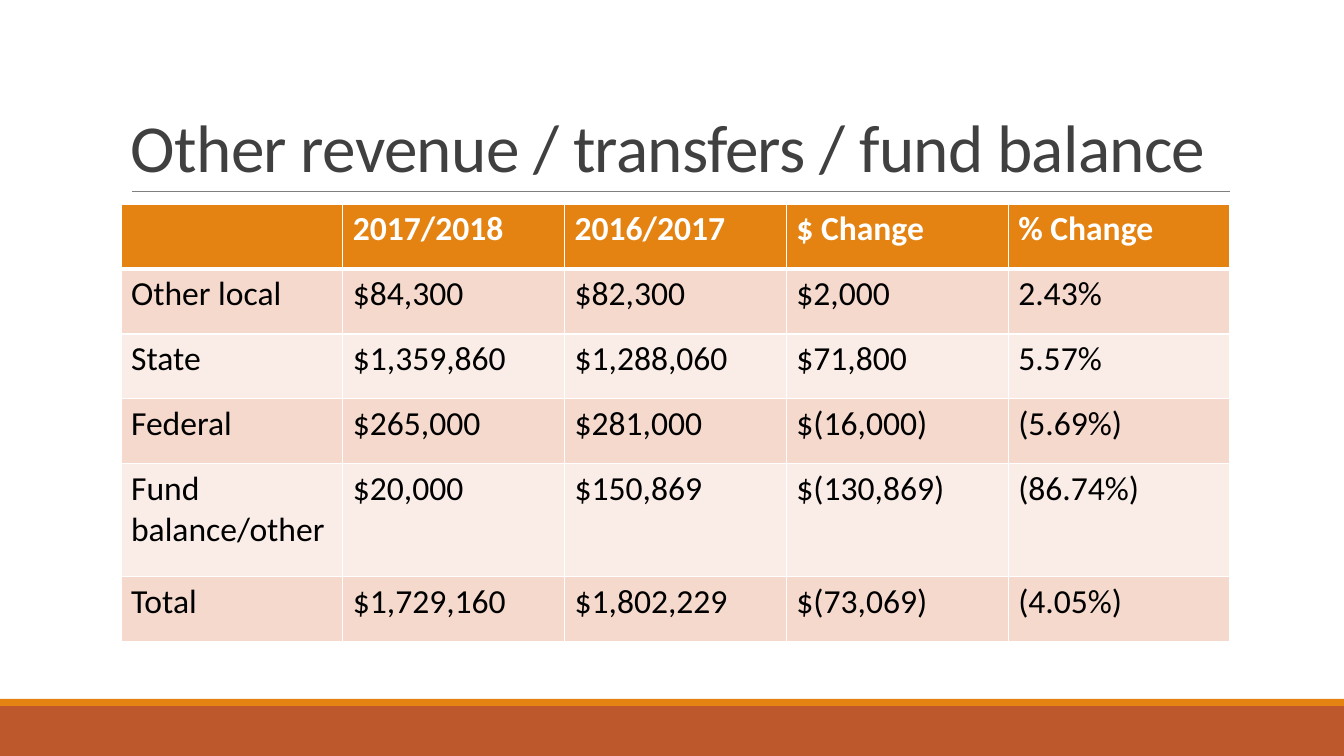
from lxml.etree import SubElement
from pptx import Presentation
from pptx.dml.color import RGBColor
from pptx.enum.shapes import MSO_CONNECTOR, MSO_SHAPE
from pptx.enum.text import MSO_ANCHOR
from pptx.oxml.ns import qn
from pptx.util import Emu, Pt

TITLE = "Other revenue / transfers / fund balance"
ROWS = [
    ("", "2017/2018", "2016/2017", "$ Change", "% Change"),
    ("Other local", "$84,300", "$82,300", "$2,000", "2.43%"),
    ("State", "$1,359,860", "$1,288,060", "$71,800", "5.57%"),
    ("Federal", "$265,000", "$281,000", "$(16,000)", "(5.69%)"),
    ("Fund balance/other", "$20,000", "$150,869", "$(130,869)", "(86.74%)"),
    ("Total", "$1,729,160", "$1,802,229", "$(73,069)", "(4.05%)"),
]
ROW_HEIGHTS = (65, 65, 65, 65, 113, 65)

FONT = "Calibri"
WHITE = RGBColor(0xFF, 0xFF, 0xFF)
BLACK = RGBColor(0x00, 0x00, 0x00)
TITLE_GREY = RGBColor(0x40, 0x40, 0x40)
RULE_GREY = RGBColor(0x80, 0x80, 0x80)
ORANGE = RGBColor(0xE4, 0x83, 0x12)
RUST = RGBColor(0xBD, 0x58, 0x2C)
BAND_DARK = RGBColor(0xF5, 0xD9, 0xCC)
BAND_LIGHT = RGBColor(0xFA, 0xED, 0xE7)

PAGE_WIDTH, PAGE_HEIGHT = 1344, 756
LEFT, CONTENT_WIDTH = 121, 1109


def px(length):
    return Emu(round(length * 12192000 / PAGE_WIDTH))


def add_bar(page, top, height, color):
    bar = page.shapes.add_shape(
        MSO_SHAPE.RECTANGLE, 0, px(top), px(PAGE_WIDTH), px(height))
    bar.shadow.inherit = False
    bar.fill.solid()
    bar.fill.fore_color.rgb = color
    bar.line.fill.background()


def add_rule(page):
    rule = page.shapes.add_connector(
        MSO_CONNECTOR.STRAIGHT, px(132), px(191), px(1230), px(191))
    rule.line.color.rgb = RULE_GREY
    rule.line.width = Pt(0.5)
    SubElement(rule._element.spPr, qn("a:effectLst"))


def add_title(page):
    box = page.shapes.add_textbox(px(LEFT), px(31), px(CONTENT_WIDTH), px(160))
    frame = box.text_frame
    frame.word_wrap = True
    frame.vertical_anchor = MSO_ANCHOR.BOTTOM
    para = frame.paragraphs[0]
    para.line_spacing = 0.85
    span = para.add_run()
    span.text = TITLE
    span.font.name = FONT
    span.font.size = Pt(48)
    span.font.color.rgb = TITLE_GREY
    span.font._element.set("spc", "-50")


def set_borders(cell, top, bottom):
    """Draw white borders; must run before the cell fill is set."""
    properties = cell._tc.get_or_add_tcPr()
    for side, width in (("L", 1), ("R", 1), ("T", top), ("B", bottom)):
        line = SubElement(properties, qn(f"a:ln{side}"), w=str(Pt(width)))
        fill = SubElement(line, qn("a:solidFill"))
        SubElement(fill, qn("a:srgbClr"), val=str(WHITE))


def add_revenue_table(page):
    columns = len(ROWS[0])
    table = page.shapes.add_table(
        len(ROWS), columns, px(LEFT), px(204),
        px(CONTENT_WIDTH), px(sum(ROW_HEIGHTS))).table
    for column in table.columns:
        column.width = px(CONTENT_WIDTH / columns)
    for index, (values, height) in enumerate(zip(ROWS, ROW_HEIGHTS)):
        table.rows[index].height = px(height)
        header = index == 0
        band = ORANGE if header else BAND_DARK if index % 2 else BAND_LIGHT
        for cell, value in zip(table.rows[index].cells, values):
            set_borders(cell, top=3 if index == 1 else 1, bottom=3 if header else 1)
            cell.fill.solid()
            cell.fill.fore_color.rgb = band
            cell.text = value
            font = cell.text_frame.paragraphs[0].font
            font.name = FONT
            font.size = Pt(24)
            font.bold = header
            font.color.rgb = WHITE if header else BLACK


def main():
    deck = Presentation()
    deck.slide_width, deck.slide_height = px(PAGE_WIDTH), px(PAGE_HEIGHT)
    page = deck.slides.add_slide(deck.slide_layouts[6])
    add_bar(page, 706, 50, RUST)
    add_bar(page, 699, 7, ORANGE)
    add_rule(page)
    add_title(page)
    add_revenue_table(page)
    deck.save("out.pptx")


if __name__ == "__main__":
    main()
